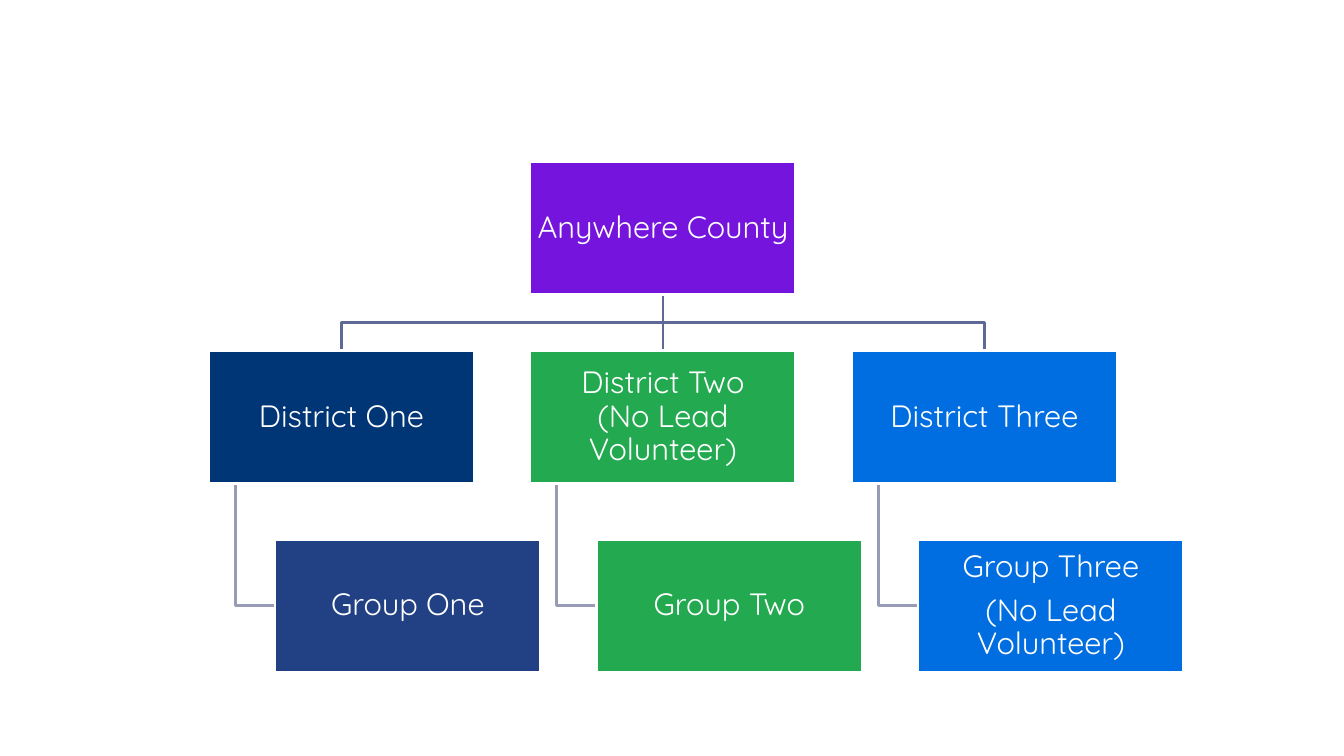
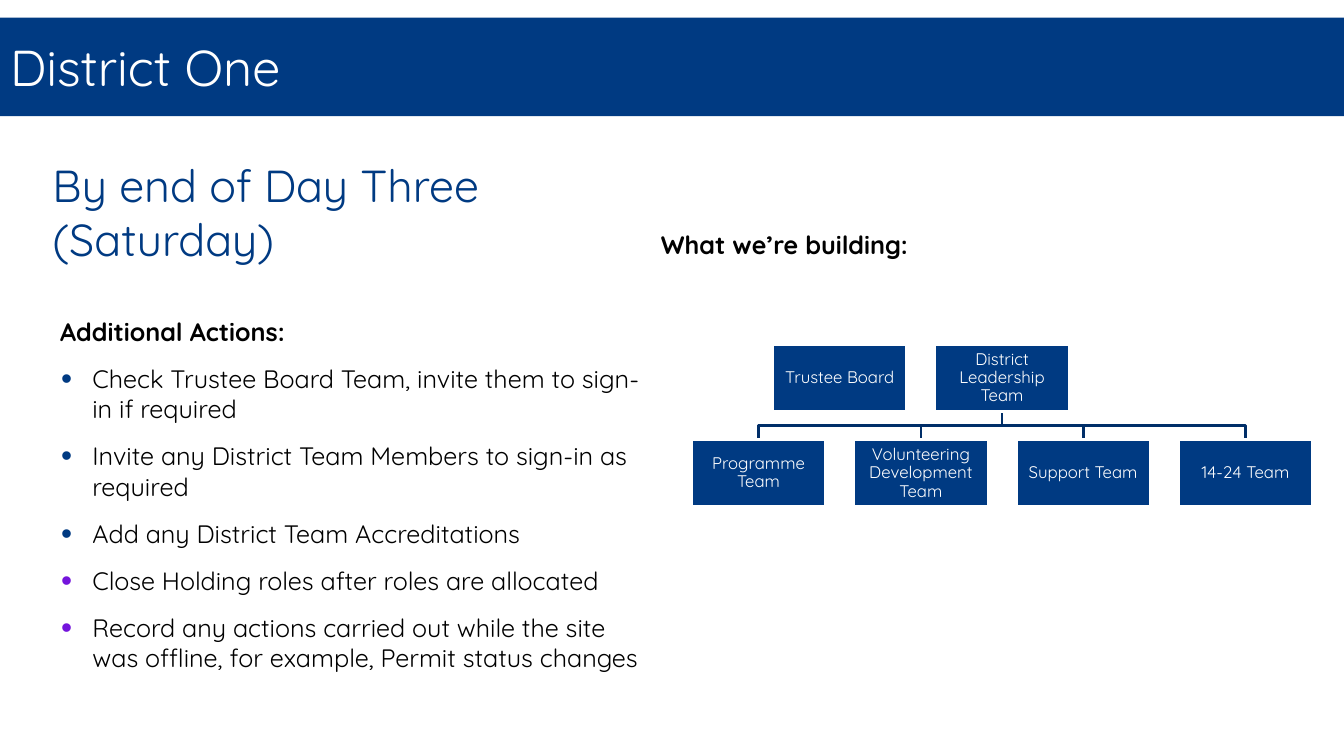
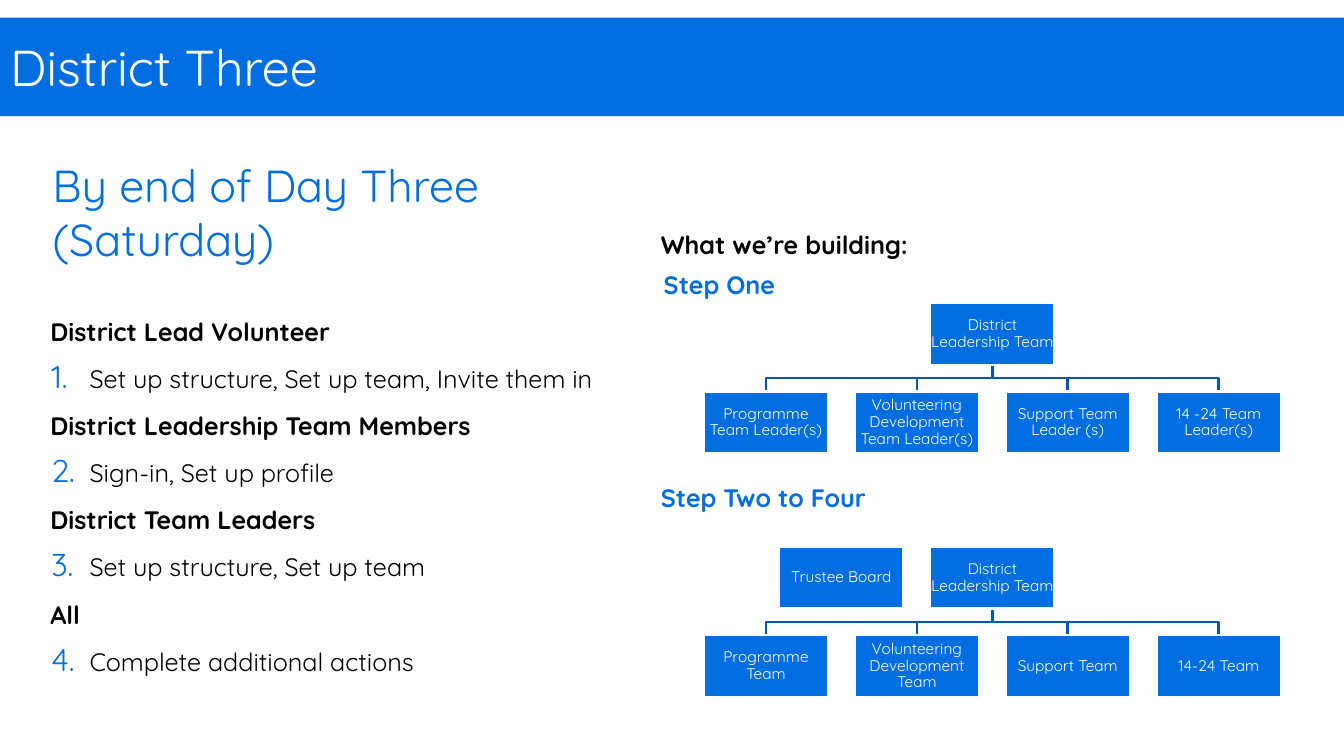
from lxml.etree import SubElement
from pptx import Presentation
from pptx.dml.color import RGBColor
from pptx.enum.shapes import MSO_CONNECTOR, MSO_SHAPE
from pptx.enum.text import MSO_ANCHOR, MSO_AUTO_SIZE, PP_ALIGN
from pptx.oxml.ns import qn
from pptx.util import Pt

COLOURS = {
    "white": "FFFFFF", "black": "000000", "purple": "7414DC",
    "deep_navy": "003576", "navy": "003A82", "navy_line": "002E68",
    "indigo": "224184", "green": "23A950", "blue": "006EE0",
    "blue_line": "0058B3", "slate": "5E6995", "mist": "979CB4",
}
FONT = "Quicksand"
SLIDE_WIDTH, SLIDE_HEIGHT = 960, 540
LEADERSHIP = ("District Leadership Team", 1.5)
TRUSTEES = ("Trustee Board", 0.5)
TEAMS = ["Programme Team", "Volunteering Development Team", "Support Team", "14-24 Team"]
LEADERS = ["Programme Team Leader(s)", "Volunteering Development Team Leader(s)",
           "Support Team Leader (s)", "14 -24 Team Leader(s)"]


def rgb(name):
    return RGBColor.from_string(COLOURS[name])


def assign(target, values):
    for name, value in values.items():
        setattr(target, name, value)


def format_runs(paragraph, size, colour, bold=False):
    for run in paragraph.runs:
        assign(run.font, {"name": FONT, "size": Pt(size), "bold": bold})
        run.font.color.rgb = rgb(colour)


def set_frame(frame, across, down, anchor=MSO_ANCHOR.TOP):
    assign(frame, {
        "word_wrap": True, "auto_size": MSO_AUTO_SIZE.NONE, "vertical_anchor": anchor,
        "margin_left": Pt(across), "margin_right": Pt(across),
        "margin_top": Pt(down), "margin_bottom": Pt(down),
    })


def add_label(slide, box, text, size, colour, bold=False, insets=(7.2, 3.6)):
    frame = slide.shapes.add_textbox(*map(Pt, box)).text_frame
    set_frame(frame, *insets)
    frame.text = text
    format_runs(frame.paragraphs[0], size, colour, bold)


def add_marker(paragraph, marker, colour):
    indent = 23 if marker == "•" else 28
    properties = paragraph._p.get_or_add_pPr()
    properties.set("marL", str(Pt(indent)))
    properties.set("indent", str(-Pt(indent - 0.7)))
    holder = SubElement(properties, qn("a:buClr"))
    SubElement(holder, qn("a:srgbClr"), val=COLOURS[colour])
    SubElement(properties, qn("a:buSzPct"), val="125000")
    if marker == "•":
        SubElement(properties, qn("a:buFont"), typeface="Arial")
        SubElement(properties, qn("a:buChar"), char=marker)
    else:
        SubElement(properties, qn("a:buFont"), typeface=FONT)
        SubElement(properties, qn("a:buAutoNum"), type="arabicPeriod", startAt=str(marker))


def add_actions(slide, box, actions):
    frame = slide.shapes.add_textbox(*map(Pt, box)).text_frame
    set_frame(frame, 5, 3)
    for index, (text, marker, colour) in enumerate(actions):
        paragraph = frame.add_paragraph() if index else frame.paragraphs[0]
        if marker:
            add_marker(paragraph, marker, colour)
        paragraph.text = text
        assign(paragraph, {"space_before": Pt(6 if index else 0), "space_after": Pt(6)})
        format_runs(paragraph, 18, "black", bold=not marker)


def add_unit(slide, box, text, size, colour):
    unit = slide.shapes.add_shape(MSO_SHAPE.RECTANGLE, *map(Pt, box))
    unit.shadow.inherit = False
    unit.fill.solid()
    unit.fill.fore_color.rgb = rgb(colour)
    unit.line.color.rgb = rgb("white")
    unit.line.width = Pt(2)
    set_frame(unit.text_frame, size * 0.05, size * 0.05, MSO_ANCHOR.MIDDLE)
    unit.text_frame.text = text
    for paragraph in unit.text_frame.paragraphs:
        assign(paragraph, {"alignment": PP_ALIGN.CENTER, "line_spacing": 0.9,
                           "space_after": Pt(size * 0.35)})
        format_runs(paragraph, size, "white")
    return unit


def finish_link(slide, link, colour):
    link.line.color.rgb = rgb(colour)
    link.line.width = Pt(2)
    slide.shapes.element.insert(2, link.element)


def add_elbow(slide, points, colour):
    builder = slide.shapes.build_freeform(*points[0])
    builder.add_line_segments(points[1:], close=False)
    elbow = builder.convert_to_shape()
    elbow.shadow.inherit = False
    elbow.fill.background()
    finish_link(slide, elbow, colour)


def link_below(slide, parent, child, colour):
    start = parent.left + parent.width // 2
    end = child.left + child.width // 2
    bottom = parent.top + parent.height
    if abs(start - end) < Pt(1):
        link = slide.shapes.add_connector(MSO_CONNECTOR.STRAIGHT, start, bottom, end, child.top)
        link.begin_connect(parent, 2)
        link.end_connect(child, 0)
        SubElement(link.element.spPr, qn("a:effectLst"))
        finish_link(slide, link, colour)
    else:
        middle = (bottom + child.top) // 2
        add_elbow(slide, [(start, bottom), (start, middle), (end, middle), (end, child.top)], colour)


def link_beside(slide, parent, child, colour):
    trunk = parent.left + parent.width // 10
    middle = child.top + child.height // 2
    add_elbow(slide, [(trunk, parent.top + parent.height), (trunk, middle),
                      (child.left, middle)], colour)


def unit_box(left, top, width, column, row):
    return left + column * 1.21 * width, top + row * 0.71 * width, width, width / 2


def add_county(slide, left, top, width):
    districts = [
        ("District One", "deep_navy", "Group One", "indigo"),
        ("District Two\v(No Lead Volunteer)", "green", "Group Two", "green"),
        ("District Three", "blue", "Group Three\n(No Lead Volunteer)", "blue"),
    ]
    county = add_unit(slide, unit_box(left, top, width, 1, 0), "Anywhere County", 22, "purple")
    for column, (name, colour, group_name, group_colour) in enumerate(districts):
        district = add_unit(slide, unit_box(left, top, width, column, 1), name, 22, colour)
        group_box = unit_box(left + width / 4, top, width, column, 2)
        group = add_unit(slide, group_box, group_name, 22, group_colour)
        link_below(slide, county, district, "slate")
        link_beside(slide, district, group, "mist")


def add_teams(slide, left, top, width, size, colour, heads, teams):
    for name, column in heads:
        lead = add_unit(slide, unit_box(left, top, width, column, 0), name, size, colour)
    for column, name in enumerate(teams):
        team = add_unit(slide, unit_box(left, top, width, column, 1), name, size, colour)
        link_below(slide, lead, team, colour + "_line")


def add_district_slide(deck, name, colour, actions_left, actions):
    slide = deck.slides.add_slide(deck.slide_layouts[5])
    band = slide.shapes.title
    assign(band, {"left": 0, "top": Pt(12.5), "width": Pt(SLIDE_WIDTH), "height": Pt(70.5)})
    band.fill.solid()
    band.fill.fore_color.rgb = rgb(colour)
    set_frame(band.text_frame, 7.2, 3.6, MSO_ANCHOR.MIDDLE)
    band.text_frame.text = name
    band.text_frame.paragraphs[0].alignment = PP_ALIGN.LEFT
    format_runs(band.text_frame.paragraphs[0], 36, "white")
    add_label(slide, (37.5, 112.5, 427, 78), "By end of Day Three (Saturday)", 32, colour,
              insets=(0, 0))
    add_label(slide, (465, 160, 223, 29), "What we’re building:", 18, "black", True)
    add_actions(slide, (actions_left, 223, 427, 264), actions)
    return slide


def main():
    deck = Presentation()
    deck.slide_width, deck.slide_height = Pt(SLIDE_WIDTH), Pt(SLIDE_HEIGHT)

    overview = deck.slides.add_slide(deck.slide_layouts[6])
    add_county(overview, 149, 115.7, 189.8)

    one = add_district_slide(deck, "District One", "navy", 38, [
        ("Additional Actions:", None, None),
        ("Check Trustee Board Team, invite them to sign-in if required", "•", "navy"),
        ("Invite any District Team Members to sign-in as required", "•", "navy"),
        ("Add any District Team Accreditations", "•", "navy"),
        ("Close Holding roles after roles are allocated", "•", "purple"),
        ("Record any actions carried out while the site was offline, for example, "
         "Permit status changes", "•", "purple"),
    ])
    add_teams(one, 494, 246.2, 95.8, 12, "navy", [TRUSTEES, LEADERSHIP], TEAMS)

    three = add_district_slide(deck, "District Three", "blue", 31, [
        ("District Lead Volunteer", None, None),
        ("Set up structure, Set up team, Invite them in", 1, "blue"),
        ("District Leadership Team Members", None, None),
        ("Sign-in, Set up profile", 2, "blue"),
        ("District Team Leaders", None, None),
        ("Set up structure, Set up team", 3, "blue"),
        ("All", None, None),
        ("Complete additional actions", 4, "blue"),
    ])
    add_label(three, (467, 189, 223, 29), "Step One", 18, "blue", True)
    add_teams(three, 502.6, 216.2, 89.1, 11, "blue", [LEADERSHIP], LEADERS)
    add_label(three, (465, 341, 223, 29), "Step Two to Four", 18, "blue", True)
    add_teams(three, 502.6, 390.4, 89.1, 11, "blue", [TRUSTEES, LEADERSHIP], TEAMS)

    deck.save("out.pptx")


if __name__ == "__main__":
    main()
